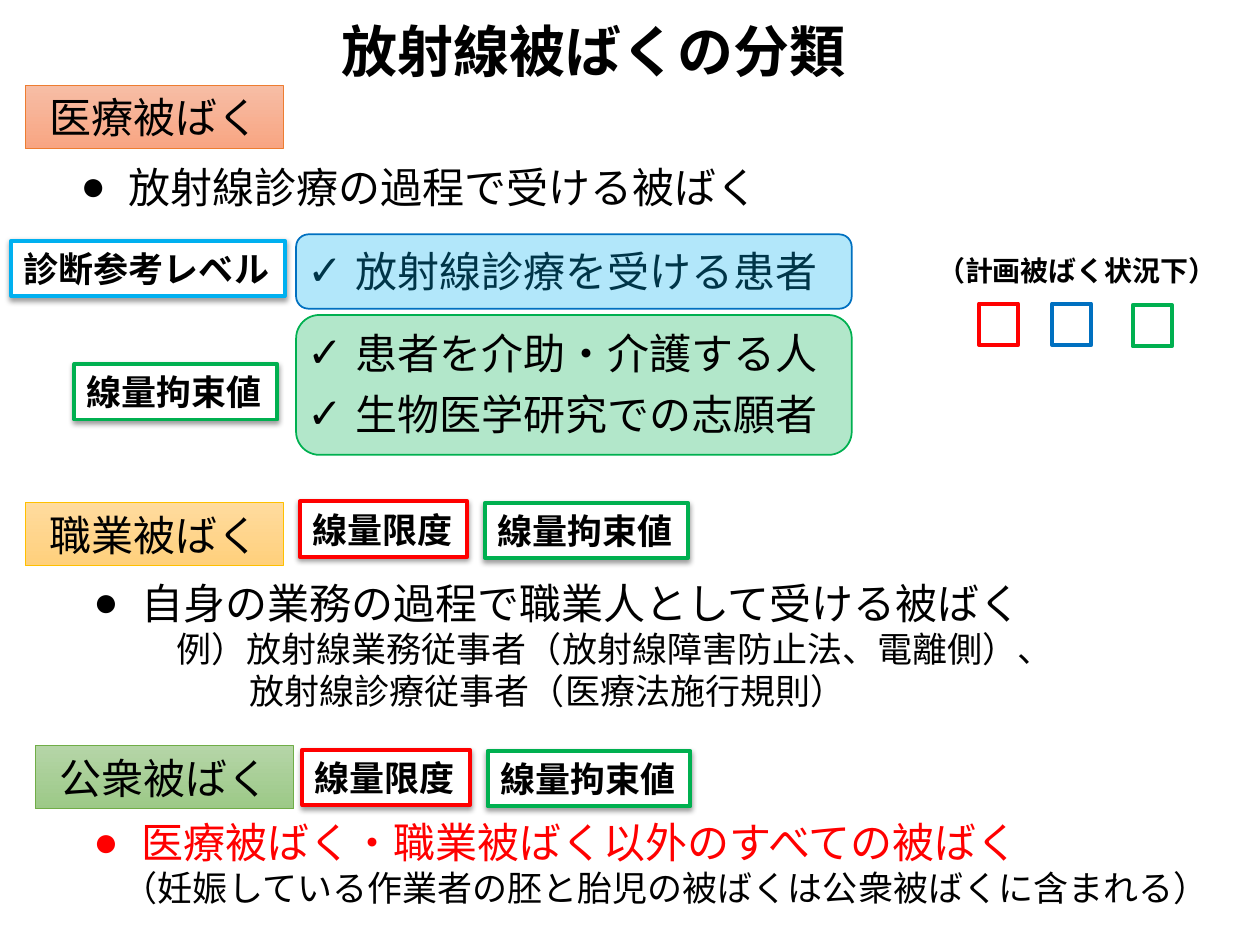
from dataclasses import dataclass

from lxml import etree
from pptx import Presentation
from pptx.dml.color import RGBColor
from pptx.enum.shapes import MSO_SHAPE
from pptx.enum.text import MSO_ANCHOR, MSO_AUTO_SIZE, PP_ALIGN
from pptx.oxml.ns import qn
from pptx.util import Emu, Pt

RECT, ROUNDED = MSO_SHAPE.RECTANGLE, MSO_SHAPE.ROUNDED_RECTANGLE
LEFT, CENTER = PP_ALIGN.LEFT, PP_ALIGN.CENTER
TOP, MIDDLE = MSO_ANCHOR.TOP, MSO_ANCHOR.MIDDLE
NO_FIT = MSO_AUTO_SIZE.NONE
COMPARISON = 4  # layout with a title and four body placeholders


def px(n):
    """100 px to the inch."""
    return Emu(n * 9144)


@dataclass(frozen=True)
class Theme:
    font: str = "Comic Neue"
    heading_font: str = "Noto Sans CJK JP"
    black: str = "000000"
    white: str = "FFFFFF"
    red: str = "FF0000"
    green: str = "00B050"
    blue: str = "0070C0"
    sky: str = "00B0F0"
    medical: tuple = ("F7BDA5", "F8A582", "ED7D31")  # top, bottom, line
    work: tuple = ("FFDB9E", "FFD07C", "FFC000")
    public: tuple = ("B5D5A7", "9CC987", "70AD47")
    title: int = 32
    body: int = 24
    label: int = 20
    note: int = 16


T = Theme()


def rgb(value):
    return RGBColor.from_string(value)


def write(p, text, *, size=T.body, font=T.font, color=T.black, bold=False,
          align=LEFT, spacing=1.0, before=0, after=0, bullet=None, indent=0):
    """Fill paragraph p; a bullet hangs in the indent."""
    pPr = p._p.get_or_add_pPr()
    pPr.set("marL", str(px(indent)))
    pPr.set("indent", str(px(-indent if bullet else 0)))
    if bullet:
        etree.SubElement(pPr, qn("a:buChar")).set("char", bullet)
    else:
        etree.SubElement(pPr, qn("a:buNone"))
    p.alignment, p.line_spacing = align, spacing
    p.space_before, p.space_after = Pt(before), Pt(after)
    r = p.add_run()
    r.text = text
    r.font.size, r.font.bold, r.font.name = Pt(size), bold, font
    r.font.color.rgb = rgb(color)
    etree.SubElement(r._r.get_or_add_rPr(), qn("a:ea")).set("typeface", font)


class Deck:
    def __init__(self, prs, theme):
        self.t = theme
        self.slide = prs.slides.add_slide(prs.slide_layouts[COMPARISON])
        self.shapes = self.slide.shapes

    def placeholder(self, idx, box, anchor):
        """Move a placeholder into place and to the front."""
        sp = self.slide.placeholders[idx]
        sp.left, sp.top, sp.width, sp.height = map(px, box)
        self.slide.shapes._spTree.append(sp._element)
        tf = sp.text_frame
        tf.auto_size, tf.vertical_anchor, tf.word_wrap = NO_FIT, anchor, True
        return tf

    def title(self, box, text):
        tf = self.placeholder(0, box, MIDDLE)
        write(tf.paragraphs[0], text, size=self.t.title, bold=True,
              font=self.t.heading_font, spacing=0.9)

    def list(self, idx, box, items):
        tf = self.placeholder(idx, box, TOP)
        for i, (text, style) in enumerate(items):
            p = tf.paragraphs[0] if i == 0 else tf.add_paragraph()
            write(p, text, **style)

    def box(self, kind, box, line, width):
        sp = self.shapes.add_shape(kind, *map(px, box))
        sp.shadow.inherit = False
        sp.fill.background()
        sp.line.color.rgb, sp.line.width = rgb(line), Pt(width)
        return sp

    def panel(self, box, fill, line):
        """Rounded panel with a 30 % tint."""
        sp = self.box(ROUNDED, box, line, 1)
        sp.fill.solid()
        sp.fill.fore_color.rgb = rgb(fill)
        clr = sp._element.spPr.find(qn("a:solidFill")).find(qn("a:srgbClr"))
        etree.SubElement(clr, qn("a:alpha")).set("val", "30000")

    def section(self, x, y, text, colors):
        *stops, line = colors
        sp = self.box(RECT, (x, y, 205, 50), line, 0.5)
        sp.fill.gradient()
        sp.fill.gradient_angle = 270
        for stop, color in zip(sp.fill.gradient_stops, stops):
            stop.color.rgb = rgb(color)
        write(sp.text_frame.paragraphs[0], text, align=CENTER)

    def label(self, x, y, w, text, line):
        sp = self.box(RECT, (x, y, w, 44), line, 2.25)
        sp.fill.solid()
        sp.fill.fore_color.rgb = rgb(self.t.white)
        effects = sp._element.spPr.find(qn("a:effectLst"))
        shadow = etree.SubElement(
            effects, qn("a:outerShdw"), blurRad=str(Pt(3.1)),
            dist=str(Pt(1.6)), dir="5400000", rotWithShape="0")
        clr = etree.SubElement(shadow, qn("a:srgbClr"), val=self.t.black)
        etree.SubElement(clr, qn("a:alpha"), val="38000")
        sp.text_frame.word_wrap = False
        write(sp.text_frame.paragraphs[0], text, size=self.t.label, bold=True)

    def legend(self, box, text, squares):
        """Grouped caption with one empty square per colour."""
        self.shapes = self.slide.shapes.add_group_shape().shapes
        tf = self.shapes.add_textbox(*map(px, box)).text_frame
        tf.word_wrap, tf.vertical_anchor = True, MIDDLE
        write(tf.paragraphs[0], text, size=self.t.note, bold=True,
              font=self.t.heading_font, spacing=0.9)
        for x, y, color in squares:
            self.box(RECT, (x, y, 31, 33), color, 2.25)
        self.shapes = self.slide.shapes


def main():
    prs = Presentation()
    prs.slide_width, prs.slide_height = px(1000), px(750)
    d = Deck(prs, T)
    dot = dict(bullet="●", indent=38)
    check = dict(bullet="✓", indent=38)
    limit, constraint = "線量限度", "線量拘束値"

    # Title
    d.title((261, 1, 504, 84), "放射線被ばくの分類")

    # Medical exposure
    d.section(20, 68, "医療被ばく", T.medical)
    d.list(1, (54, 123, 740, 50), [("放射線診療の過程で受ける被ばく", dot)])
    d.panel((235, 250, 441, 111), T.green, T.green)
    d.list(2, (234, 190, 590, 165), [
        ("放射線診療を受ける患者", dict(check, after=12)),
        ("患者を介助・介護する人", dict(check, before=6)),
        ("生物医学研究での志願者", dict(check, before=6)),
    ])
    d.panel((235, 186, 441, 59), T.sky, T.blue)
    d.label(9, 191, 217, "診断参考レベル", T.sky)
    d.label(59, 289, 161, constraint, T.green)

    # Occupational exposure
    d.section(20, 399, "職業被ばく", T.work)
    d.list(3, (64, 453, 929, 158), [
        ("自身の業務の過程で職業人として受ける被ばく", dot),
        ("例）放射線業務従事者（放射線障害防止法、電離側）、",
         dict(size=T.label, indent=66)),
        ("放射線診療従事者（医療法施行規則）",
         dict(size=T.label, indent=124)),
    ])

    # Public exposure
    d.section(28, 592, "公衆被ばく", T.public)
    d.list(4, (64, 643, 929, 105), [
        ("医療被ばく・職業被ばく以外のすべての被ばく",
         dict(dot, color=T.red, font=T.heading_font)),
        ("（妊娠している作業者の胚と胎児の被ばくは公衆被ばくに含まれる）",
         dict(size=T.label, align=CENTER, font=T.heading_font)),
    ])

    # Limit and constraint labels beside the lower two sections
    for x, y in ((238, 398), (240, 595)):
        d.label(x, y, 133, limit, T.red)
        d.label(x + 147, y + 1, 161, constraint, T.green)

    # Legend
    d.legend((734, 186, 247, 61), "（計画被ばく状況下）",
             [(777, 241, T.red), (835, 241, T.blue), (899, 242, T.green)])

    prs.save("out.pptx")


if __name__ == "__main__":
    main()
